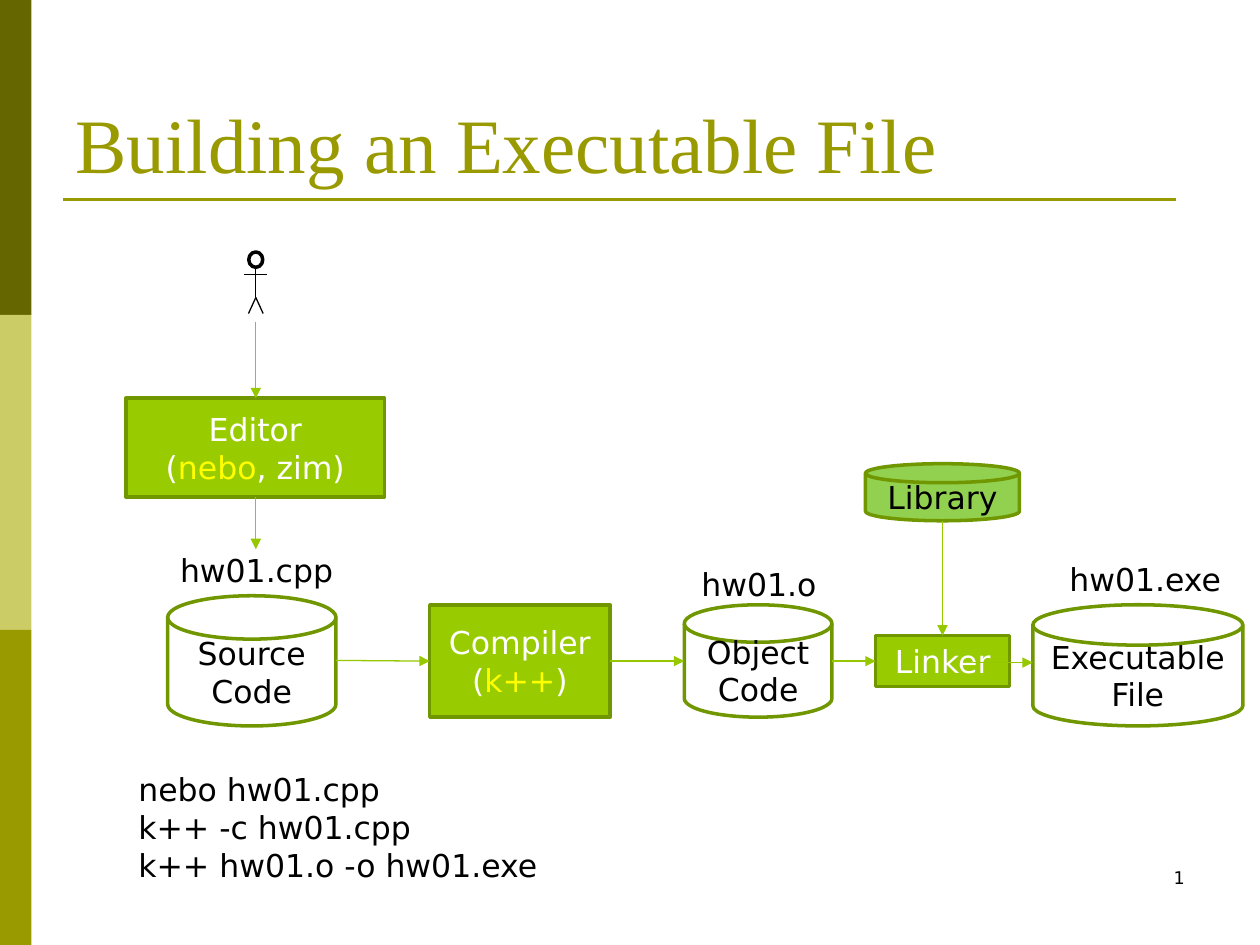
from lxml import etree
from pptx import Presentation
from pptx.dml.color import RGBColor
from pptx.enum.shapes import MSO_CONNECTOR, MSO_SHAPE
from pptx.enum.text import MSO_ANCHOR, MSO_AUTO_SIZE, PP_ALIGN
from pptx.oxml.ns import qn
from pptx.util import Pt

STRAIGHT = MSO_CONNECTOR.STRAIGHT
RECT, OVAL = MSO_SHAPE.RECTANGLE, MSO_SHAPE.OVAL
DISK = MSO_SHAPE.FLOWCHART_MAGNETIC_DISK
TOP, MIDDLE, BOTTOM = MSO_ANCHOR.TOP, MSO_ANCHOR.MIDDLE, MSO_ANCHOR.BOTTOM
LEFT, CENTER, RIGHT = PP_ALIGN.LEFT, PP_ALIGN.CENTER, PP_ALIGN.RIGHT
GROW = MSO_AUTO_SIZE.SHAPE_TO_FIT_TEXT

SANS, SERIF = "DejaVu Sans", "Times New Roman"
BLACK, WHITE, YELLOW = "000000", "FFFFFF", "FFFF00"
OLIVE, DARK_OLIVE, PALE_OLIVE = "999900", "666600", "CCCC66"
GREEN, EDGE, ARROW, LIBRARY = "99CC00", "719700", "96C800", "92D050"


def rgb(value):
    """Turn a hex string into a colour."""
    return RGBColor.from_string(value)


def write(tf, paragraphs, align=LEFT, anchor=TOP, size=18, font=SANS):
    """Fill a text frame with paragraphs made of (text, colour) runs."""
    tf.vertical_anchor = anchor
    for i, runs in enumerate(paragraphs):
        p = tf.paragraphs[0] if i == 0 else tf.add_paragraph()
        p.alignment = align
        for text, color in runs:
            r = p.add_run()
            r.text = text
            r.font.size, r.font.name = Pt(size), font
            r.font.color.rgb = rgb(color)


def add_shape(shapes, kind, box, fill=None, line=None):
    """Add a preset shape with an optional fill and 2 pt outline."""
    sp = shapes.add_shape(kind, *map(Pt, box))
    sp.shadow.inherit = False
    if fill:
        sp.fill.solid()
        sp.fill.fore_color.rgb = rgb(fill)
    else:
        sp.fill.background()
    if line:
        sp.line.color.rgb = rgb(line)
        sp.line.width = Pt(2)
    else:
        sp.line.fill.background()
    return sp


def add_node(s, kind, box, paragraphs, fill=None):
    """Add an outlined flow node with centred text."""
    sp = add_shape(s.shapes, kind, box, fill, EDGE)
    sp.text_frame.word_wrap = True
    write(sp.text_frame, paragraphs, CENTER, MIDDLE)


def add_text(s, box, lines, wrap=True, grow=True, align=LEFT, size=18):
    """Add a text box with one black run per line."""
    tf = s.shapes.add_textbox(*map(Pt, box)).text_frame
    tf.word_wrap = wrap
    if grow:
        tf.auto_size = GROW
    write(tf, [[(line, BLACK)] for line in lines], align, size=size)


def add_line(shapes, ends, color, width=0.75, arrow=False):
    """Add a straight line, with an arrowhead at its end if asked."""
    cn = shapes.add_connector(STRAIGHT, *map(Pt, ends))
    cn.line.color.rgb = rgb(color)
    cn.line.width = Pt(width)
    sp_pr = cn._element.spPr
    if arrow:
        etree.SubElement(sp_pr.find(qn("a:ln")), qn("a:tailEnd"), type="triangle")
    etree.SubElement(sp_pr, qn("a:effectLst"))


def add_frame(s):
    """Add the side bars, title rule and slide number."""
    for i, color in enumerate((DARK_OLIVE, PALE_OLIVE, OLIVE)):
        add_shape(s.shapes, RECT, (0, 180 * i, 18, 180), color)
    add_line(s.shapes, (36, 114, 672, 114), OLIVE, 1.5)
    add_text(s, (516, 492, 168, 36), ["1"], grow=False, align=RIGHT, size=10)


def add_title(s, text):
    """Place and format the title placeholder."""
    sp = s.shapes.title
    sp.left, sp.top, sp.width, sp.height = map(Pt, (36, 21.6, 648, 90))
    write(sp.text_frame, [[(text, OLIVE)]], LEFT, BOTTOM, 44, SERIF)


def add_programmer(s, x):
    """Add a grouped stick figure centred on x."""
    group = s.shapes.add_group_shape()
    add_shape(group.shapes, OVAL, (x - 4, 144, 8, 8.8), line=BLACK)
    for ends in ((x, 152.8, x, 170), (x - 6.5, 157, x + 6.5, 157),
                 (x, 170, x - 4.2, 179.2), (x, 170, x + 4.2, 179.2)):
        add_line(group.shapes, ends, BLACK)


def main():
    """Build the slide and save it."""
    prs = Presentation()
    prs.slide_width, prs.slide_height = Pt(720), Pt(540)
    s = prs.slides.add_slide(prs.slide_layouts[5])
    add_frame(s)
    add_title(s, "Building an Executable File")

    editor_x, library_x, flow_y = 146.2, 538.6, 377.8
    for kind, box, fill, paragraphs in (
        (DISK, (95.8, 340.4, 96.2, 74.4), None, [[("Source Code", BLACK)]]),
        (DISK, (590.2, 345.6, 120, 69.2), None, [[("Executable File", BLACK)]]),
        (DISK, (391, 345.6, 84.4, 64.2), None, [[("Object Code", BLACK)]]),
        (DISK, (494.6, 265, 88, 32.6), LIBRARY, [[("Library", BLACK)]]),
        (RECT, (500.4, 363.2, 76.6, 29), GREEN, [[("Linker", WHITE)]]),
        (RECT, (245.6, 345.6, 103, 64.2), GREEN,
         [[("Compiler", WHITE)],
          [("(", WHITE), ("k++", YELLOW), (")", WHITE)]]),
        (RECT, (72, 227.6, 147.8, 56.4), GREEN,
         [[("Editor", WHITE)],
          [("(", WHITE), ("nebo", YELLOW), (", zim)", WHITE)]]),
    ):
        add_node(s, kind, box, paragraphs, fill)

    for x, y, width, name in ((95.8, 311.4, 103, "hw01.cpp"),
                              (604, 316.6, 103, "hw01.exe"),
                              (393.8, 319.4, 81.4, "hw01.o")):
        add_text(s, (x, y, width, 29), [name], wrap=False)

    add_programmer(s, editor_x)
    for ends in ((editor_x, 183.8, editor_x, 227.6),
                 (editor_x, 284, editor_x, 313.8),
                 (192, 377.4, 245.6, flow_y),
                 (348.6, flow_y, 391, flow_y),
                 (475.4, flow_y, 500.4, flow_y),
                 (556, 378.6, 590.2, 378.6),
                 (library_x, 297.8, library_x, 363.2)):
        add_line(s.shapes, ends, ARROW, arrow=True)

    add_text(s, (72, 436.6, 348.4, 72.6),
             ["nebo hw01.cpp", "k++ -c hw01.cpp", "k++ hw01.o -o hw01.exe"])
    prs.save("out.pptx")


if __name__ == "__main__":
    main()
